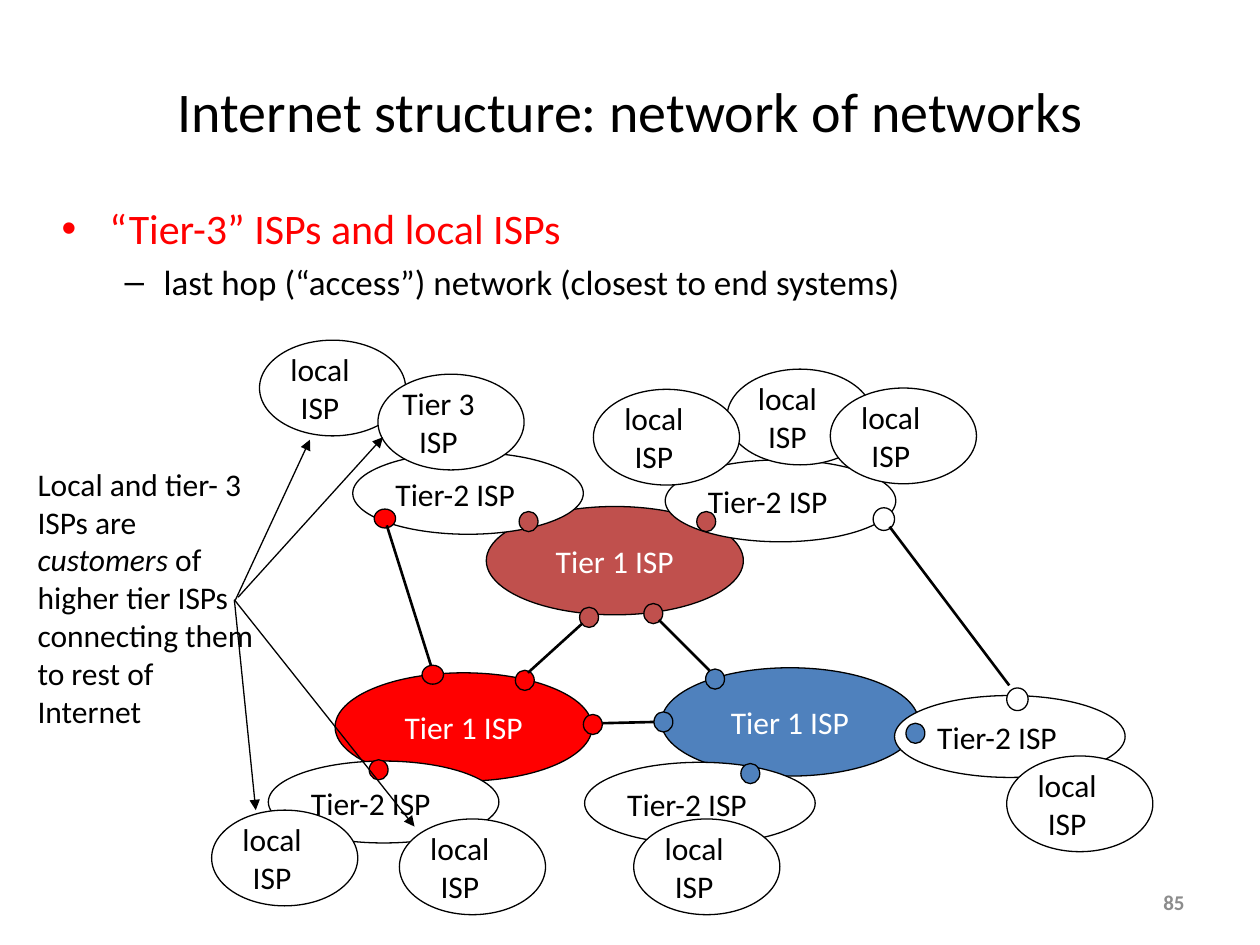
from lxml import etree
from pptx import Presentation
from pptx.dml.color import RGBColor
from pptx.enum.shapes import MSO_CONNECTOR, MSO_SHAPE
from pptx.enum.text import MSO_ANCHOR, PP_ALIGN
from pptx.oxml.ns import qn
from pptx.util import Inches, Pt

OVAL = MSO_SHAPE.OVAL
STRAIGHT = MSO_CONNECTOR.STRAIGHT
MIDDLE = MSO_ANCHOR.MIDDLE
LEFT, CENTER, RIGHT = PP_ALIGN.LEFT, PP_ALIGN.CENTER, PP_ALIGN.RIGHT
BLACK = RGBColor(0x00, 0x00, 0x00)
WHITE = RGBColor(0xFF, 0xFF, 0xFF)
RED = RGBColor(0xFF, 0x00, 0x00)
BRICK = RGBColor(0xC0, 0x50, 0x4D)
BLUE = RGBColor(0x4F, 0x81, 0xBD)
GRAY = RGBColor(0x8C, 0x8C, 0x8C)

prs = Presentation()
prs.slide_width, prs.slide_height = Inches(10), Inches(7.5)
shapes = prs.slides.add_slide(prs.slide_layouts[6]).shapes


def oval(x, y, w, h, fill):
    shape = shapes.add_shape(OVAL, Inches(x), Inches(y), Inches(w), Inches(h))
    shape.shadow.inherit = False
    shape.fill.solid()
    shape.fill.fore_color.rgb = fill
    shape.line.color.rgb = BLACK
    shape.line.width = Pt(0.75)
    return shape


def label(x, y, w, h, text, size=18, color=BLACK, align=LEFT, wrap=False):
    box = shapes.add_textbox(Inches(x), Inches(y), Inches(w), Inches(h))
    frame = box.text_frame
    frame.word_wrap = wrap
    frame.text = text
    for para in frame.paragraphs:
        para.alignment = align
        para.font.name = "Calibri"
        para.font.size = Pt(size)
        para.font.color.rgb = color
    return frame


# Title and bullets
title = label(0.58, 0.25, 8.85, 1.25, "Internet structure: network of networks",
              32, align=CENTER, wrap=True)
title.vertical_anchor = MIDDLE

body = label(0.39, 1.56, 9.23, 1,
             "“Tier-3” ISPs and local ISPs\n"
             "last hop (“access”) network (closest to end systems)", wrap=True)
bullets = [(0, "•", 0.38, -0.38, 24, RED), (1, "–", 0.81, -0.31, 20, BLACK)]
for para, (level, mark, margin, indent, size, color) in zip(body.paragraphs, bullets):
    para.level = level
    para.font.size = Pt(size)
    para.font.color.rgb = color
    para.space_before = Pt(size * 0.2)
    props = para._p.get_or_add_pPr()
    props.set("marL", str(Inches(margin)))
    props.set("indent", str(Inches(indent)))
    font = etree.SubElement(props, qn("a:buFont"))
    font.set("typeface", "Arial")
    etree.SubElement(props, qn("a:buChar")).set("char", mark)
    props.append(props.find(qn("a:defRPr")))

# Tier 1 networks
for x, y, fill in [(2.66, 5.34, RED), (3.86, 4.02, BRICK), (5.25, 5.3, BLUE)]:
    frame = oval(x, y, 2.04, 0.86, fill).text_frame
    frame.word_wrap = False
    frame.vertical_anchor = MIDDLE
    frame.text = "Tier 1 ISP"
    para = frame.paragraphs[0]
    para.alignment = CENTER
    para.font.name = "Calibri"
    para.font.size = Pt(18)
    para.font.color.rgb = WHITE

for x, y, fill in [(5.6, 5.31, BLUE), (5.11, 4.79, BRICK), (4.6, 4.82, BRICK),
                   (4.09, 5.32, RED), (4.63, 5.67, RED), (5.19, 5.65, BLUE)]:
    oval(x, y, 0.15, 0.16, fill)

# Tier 2 networks, each with its link point to tier 1
tier2 = [
    (5.28, 3.65, 5.53, 4.06, BRICK),
    (2.8, 3.59, 4.12, 4.06, BRICK),
    (2.13, 6.04, 2.93, 6.03, RED),
    (4.64, 6.05, 5.88, 6.06, BLUE),
    (7.1, 5.52, 7.19, 5.74, BLUE),
]
for x, y, dot_x, dot_y, fill in tier2:
    oval(x, y, 1.83, 0.65, WHITE)
    label(x + 0.24, y + 0.13, 1.17, 0.4, "Tier-2 ISP")
    oval(dot_x, dot_y, 0.15, 0.16, fill)

for x, y, h, fill in [(2.97, 4.04, 0.15, RED), (3.35, 5.28, 0.15, RED),
                      (6.93, 4.03, 0.18, WHITE), (7.99, 5.46, 0.18, WHITE)]:
    oval(x, y, 0.17, h, fill)

# Local and tier 3 networks
edge = [
    (5.77, 2.93, "local"), (4.71, 3.09, "local"), (6.59, 3.08, "local"),
    (1.68, 6.43, "local"), (2.06, 2.7, "local"), (3, 2.97, "Tier 3"),
    (3.17, 6.5, "local"), (5.03, 6.5, "local"), (7.99, 6, "local"),
]
for x, y, name in edge:
    oval(x, y, 1.16, 0.76, WHITE)
    label(x + 0.03, y + 0.03, 0.9, 0.71, name + "\nISP", align=CENTER)

# Side note
note = label(0.2, 3.64, 1.97, 2.22,
             "Local and tier- 3 ISPs are \nhigher tier ISPs\n"
             "connecting them to rest of Internet", wrap=True)
first = note.paragraphs[0]
for text, slant in [("customers", True), (" of", False)]:
    run = first.add_run()
    run.text = text
    run.font.italic = slant

# Links between networks, then arrows from the note
links = [
    (4.78, 5.74, 5.19, 5.73), (5.23, 4.92, 5.63, 5.32), (4.19, 5.34, 4.62, 4.95),
    (3.07, 4.17, 3.42, 5.28), (7.06, 4.18, 8.01, 5.44),
]
arrows = [
    (1.86, 4.78, 2.46, 3.49), (1.89, 4.74, 3.04, 3.47),
    (1.86, 4.76, 2.03, 6.43), (1.86, 4.76, 3.29, 6.56),
]
for ends in links + arrows:
    line = shapes.add_connector(STRAIGHT, *[Inches(v) for v in ends])
    line.line.color.rgb = BLACK
    line.line.width = Pt(0.75 if ends in arrows else 1.5)
    if ends in arrows:
        head = etree.SubElement(line.line._get_or_add_ln(), qn("a:tailEnd"))
        head.set("type", "triangle")
    etree.SubElement(line._element.spPr, qn("a:effectLst"))

number = label(7.17, 6.96, 2.33, 0.4, "85", 12, GRAY, RIGHT, True)
number.vertical_anchor = MIDDLE
number.paragraphs[0].font.bold = True

prs.save("out.pptx")
